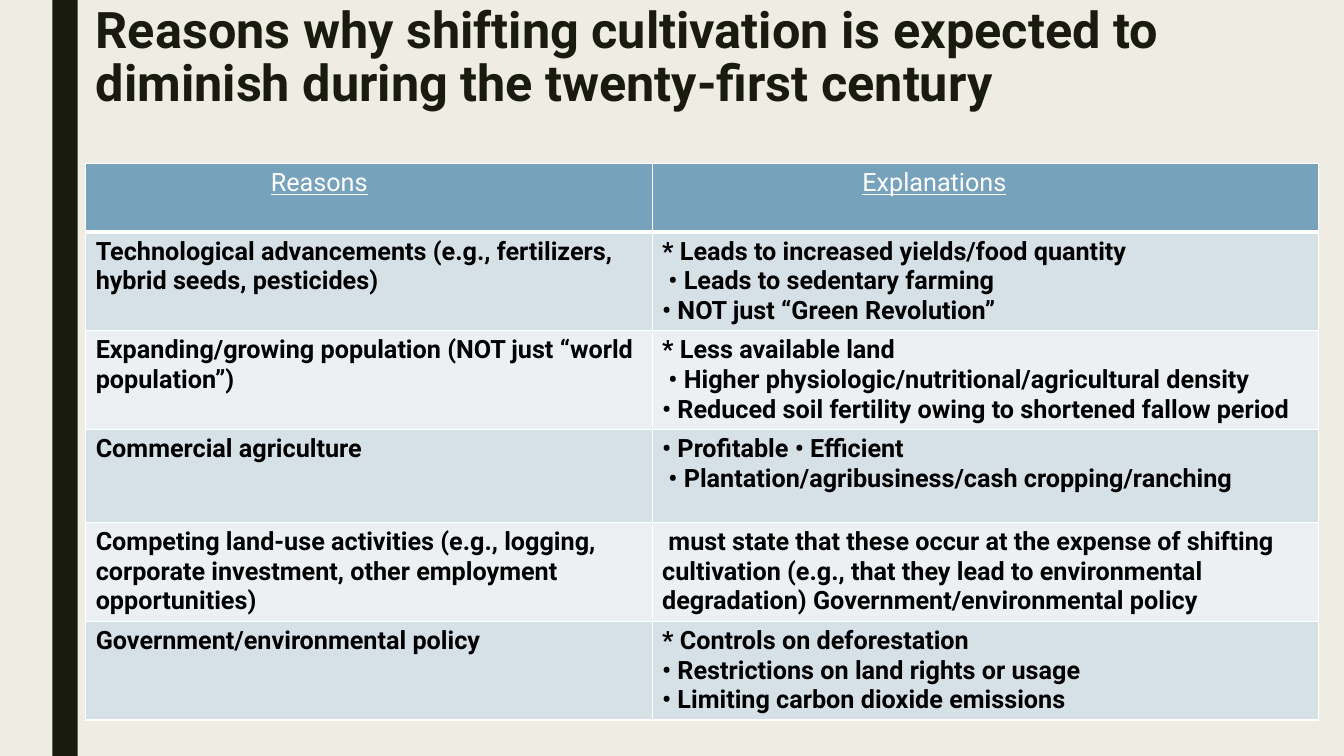
from dataclasses import dataclass

from lxml.etree import SubElement
from pptx import Presentation
from pptx.dml.color import RGBColor
from pptx.enum.shapes import MSO_SHAPE
from pptx.enum.text import MSO_ANCHOR, MSO_AUTO_SIZE, PP_ALIGN
from pptx.oxml.ns import qn
from pptx.util import Pt


@dataclass(frozen=True)
class Theme:
    font: str = "Roboto"
    background: str = "EFEDE3"
    dark: str = "191B0E"
    header: str = "77A2BB"
    bands: tuple = ("D6E0E7", "ECF0F3")
    white: str = "FFFFFF"
    black: str = "000000"
    title_size: float = 36
    table_size: float = 18
    border: float = 1
    header_border: float = 3


@dataclass(frozen=True)
class Line:
    text: str
    indent: float = 0


@dataclass(frozen=True)
class Reason:
    name: str
    explanations: tuple


THEME = Theme()
STEP = 4.5  # first-line indent of the slightly shifted lines

TITLE = "Reasons why shifting cultivation is expected to diminish during the twenty-first century"
HEADERS = (Line("Reasons", 125), Line("Explanations", 143))
REASONS = (
    Reason("Technological advancements (e.g., fertilizers, hybrid seeds, pesticides)", (
        Line("* Leads to increased yields/food quantity"),
        Line("• Leads to sedentary farming", STEP),
        Line("• NOT just “Green Revolution”"))),
    Reason("Expanding/growing population (NOT just “world population”)", (
        Line("* Less available land"),
        Line("• Higher physiologic/nutritional/agricultural density", STEP),
        Line("• Reduced soil fertility owing to shortened fallow period"))),
    Reason("Commercial agriculture", (
        Line("• Profitable • Efficient"),
        Line("• Plantation/agribusiness/cash cropping/ranching", STEP))),
    Reason("Competing land-use activities (e.g., logging, corporate investment, "
           "other employment opportunities)", (
        Line("must state that these occur at the expense of shifting cultivation (e.g., that they "
             "lead to environmental degradation) Government/environmental policy", STEP),)),
    Reason("Government/environmental policy", (
        Line("* Controls on deforestation"),
        Line("• Restrictions on land rights or usage"),
        Line("• Limiting carbon dioxide emissions"))),
)
COLUMN_WIDTHS = (404.6, 476.2)
HEADER_HEIGHT, ROW_HEIGHT = 49, 66.4


def format_font(font, color: str, **values) -> None:
    for name, value in {"name": THEME.font, **values}.items():
        setattr(font, name, value)
    font.color.rgb = RGBColor.from_string(color)


def set_borders(cell, widths: dict[str, float]) -> None:
    properties = cell._tc.get_or_add_tcPr()
    for side, width in widths.items():
        border = SubElement(properties, qn(f"a:ln{side}"), w=str(Pt(width)))
        fill = SubElement(border, qn("a:solidFill"))
        SubElement(fill, qn("a:srgbClr"), val=THEME.white)


def fill_cell(cell, lines: tuple, fill: str, color: str, top: float, bottom: float,
              **font_values) -> None:
    set_borders(cell, {"L": THEME.border, "R": THEME.border, "T": top, "B": bottom})
    cell.fill.solid()
    cell.fill.fore_color.rgb = RGBColor.from_string(fill)
    for index, line in enumerate(lines):
        frame = cell.text_frame
        paragraph = frame.add_paragraph() if index else frame.paragraphs[0]
        if line.indent:
            paragraph._p.get_or_add_pPr().set("indent", str(Pt(line.indent)))
        run = paragraph.add_run()
        run.text = line.text
        format_font(run.font, color, size=Pt(THEME.table_size), **font_values)


def add_side_bar(slide, height: int) -> None:
    bar = slide.shapes.add_shape(MSO_SHAPE.RECTANGLE, Pt(37.4), Pt(0), Pt(18), height)
    bar.shadow.inherit = False
    bar.fill.solid()
    bar.fill.fore_color.rgb = RGBColor.from_string(THEME.dark)
    bar.line.fill.background()


def set_title(slide) -> None:
    title = slide.shapes.title
    place = {"left": Pt(61.2), "top": Pt(0), "width": Pt(898.8), "height": Pt(116.6)}
    for name, value in place.items():
        setattr(title, name, value)
    frame = title.text_frame
    frame.text = TITLE
    layout = {"word_wrap": True, "auto_size": MSO_AUTO_SIZE.NONE,
              "vertical_anchor": MSO_ANCHOR.TOP}
    for name, value in layout.items():
        setattr(frame, name, value)
    paragraph = frame.paragraphs[0]
    paragraph.alignment = PP_ALIGN.LEFT
    paragraph.line_spacing = 0.89
    format_font(paragraph.runs[0].font, THEME.dark, size=Pt(THEME.title_size), bold=True)


def add_reasons_table(slide) -> None:
    heights = [HEADER_HEIGHT] + [ROW_HEIGHT] * len(REASONS)
    table = slide.shapes.add_table(
        len(heights), len(COLUMN_WIDTHS), Pt(61.2), Pt(116.6),
        Pt(sum(COLUMN_WIDTHS)), Pt(sum(heights))).table
    for column, width in zip(table.columns, COLUMN_WIDTHS):
        column.width = Pt(width)
    for row, height in zip(table.rows, heights):
        row.height = Pt(height)

    # Header row
    for index, header in enumerate(HEADERS):
        fill_cell(table.cell(0, index), (header,), THEME.header, THEME.white,
                  THEME.border, THEME.header_border, bold=False, underline=True)

    # Banded reason rows
    for row, reason in enumerate(REASONS, start=1):
        band = THEME.bands[(row - 1) % len(THEME.bands)]
        top = THEME.header_border if row == 1 else THEME.border
        for index, lines in enumerate(((Line(reason.name),), reason.explanations)):
            fill_cell(table.cell(row, index), lines, band, THEME.black,
                      top, THEME.border, bold=True)


def main() -> None:
    presentation = Presentation()
    presentation.slide_width, presentation.slide_height = Pt(960), Pt(540)
    slide = presentation.slides.add_slide(presentation.slide_layouts[5])
    slide.background.fill.solid()
    slide.background.fill.fore_color.rgb = RGBColor.from_string(THEME.background)
    add_side_bar(slide, presentation.slide_height)
    set_title(slide)
    add_reasons_table(slide)
    presentation.save("out.pptx")


if __name__ == "__main__":
    main()
